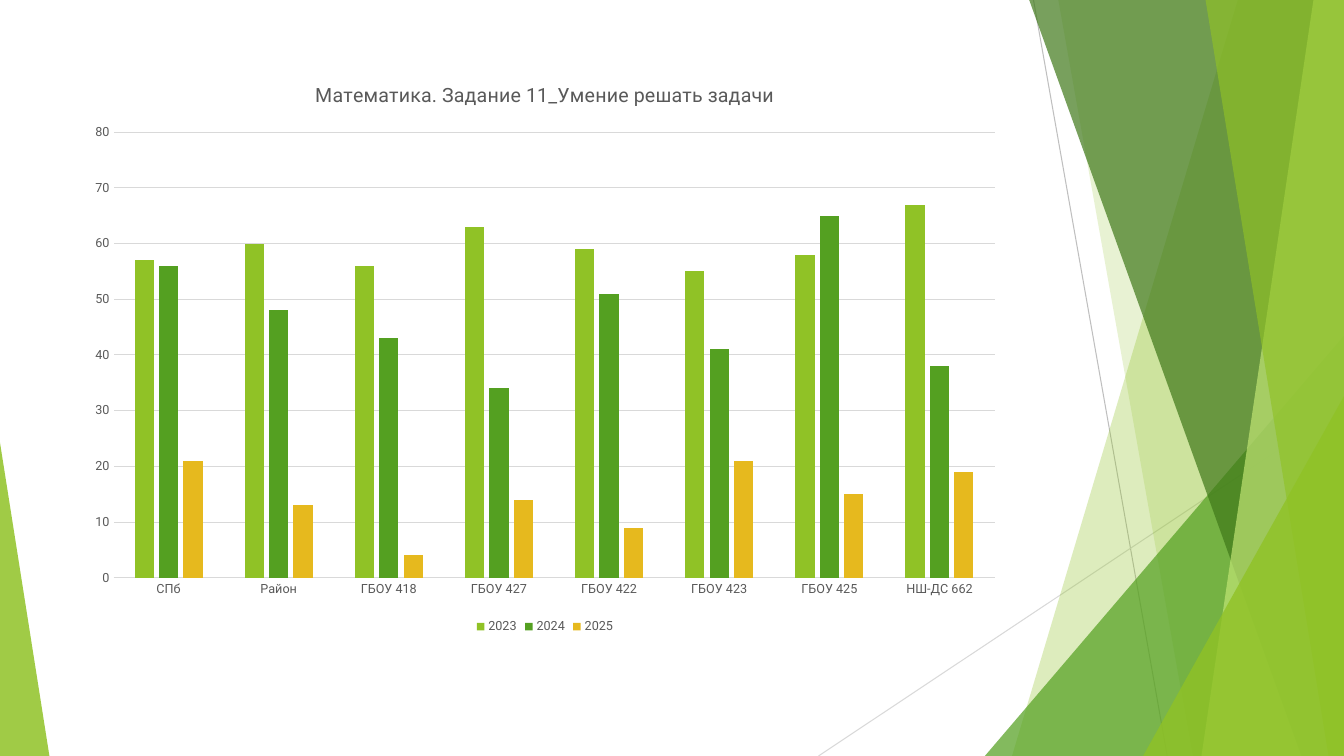
from dataclasses import dataclass

from lxml import etree
from pptx import Presentation
from pptx.chart.data import CategoryChartData
from pptx.dml.color import RGBColor
from pptx.enum.chart import XL_CHART_TYPE, XL_LEGEND_POSITION, XL_TICK_MARK
from pptx.enum.shapes import MSO_CONNECTOR, MSO_SHAPE
from pptx.oxml.ns import qn
from pptx.util import Inches, Pt

COLUMNS = XL_CHART_TYPE.COLUMN_CLUSTERED
BOTTOM = XL_LEGEND_POSITION.BOTTOM
NO_TICK = XL_TICK_MARK.NONE
STRAIGHT = MSO_CONNECTOR.STRAIGHT
TRIANGLE = MSO_SHAPE.ISOSCELES_TRIANGLE

LIME = RGBColor(0x90, 0xC2, 0x26)
GREEN = RGBColor(0x54, 0xA0, 0x21)
FOREST = RGBColor(0x3F, 0x78, 0x19)
PALE_LIME = RGBColor(0xC0, 0xE4, 0x74)
GOLD = RGBColor(0xE6, 0xB9, 0x1E)
TEXT_GRAY = RGBColor(0x59, 0x59, 0x59)
MID_GRAY = RGBColor(0xBF, 0xBF, 0xBF)
GRID_GRAY = RGBColor(0xD9, 0xD9, 0xD9)

FONT = "Roboto"
WIDTH, HEIGHT = Inches(13.333), Inches(7.5)


# Positions are percentages of the slide's width and height
@dataclass
class Ray:
    x1: float
    y1: float
    x2: float
    y2: float
    color: RGBColor


@dataclass
class Band:
    """Full-height shard from a slanted left edge to the right slide edge."""
    top_x: float
    bottom_x: float
    color: RGBColor
    alpha: int


@dataclass
class Peak:
    """Triangle standing on the bottom edge; apex 0 is left, 1 is right."""
    left: float
    right: float
    top: float
    apex: int
    color: RGBColor
    alpha: int


@dataclass
class Series:
    name: str
    values: tuple[int, ...]
    color: RGBColor


DECOR = [
    Ray(76.9, 0, 86.85, 100, MID_GRAY),
    Ray(100, 53.73, 60.9, 100, GRID_GRAY),
    Band(92.1, 75.3, LIME, 30),
    Band(78.75, 88.75, LIME, 20),
    Peak(73.28, 100, 44.4, 1, GREEN, 72),
    Band(76.58, 96.83, FOREST, 70),
    Band(97.73, 89.4, PALE_LIME, 70),
    Band(89.7, 98.85, LIME, 65),
    Peak(85.05, 100, 52.4, 1, LIME, 80),
    Peak(0, 3.68, 58.53, 0, LIME, 85),
]

TITLE = "Математика. Задание 11_Умение решать задачи"
CATEGORIES = ("СПб", "Район", "ГБОУ 418", "ГБОУ 427", "ГБОУ 422",
              "ГБОУ 423", "ГБОУ 425", "НШ-ДС 662")
SERIES = [
    Series("2023", (57, 60, 56, 63, 59, 55, 58, 67), LIME),
    Series("2024", (56, 48, 43, 34, 51, 41, 65, 38), GREEN),
    Series("2025", (21, 13, 4, 14, 9, 21, 15, 19), GOLD),
]


def px(share: float) -> int:
    return round(WIDTH * share / 100)


def py(share: float) -> int:
    return round(HEIGHT * share / 100)


def paint(sp, color: RGBColor, alpha: int) -> None:
    sp.shadow.inherit = False
    sp.line.fill.background()
    sp.fill.solid()
    sp.fill.fore_color.rgb = color
    clr = sp.fill._xPr.find(qn("a:solidFill"))[0]
    etree.SubElement(clr, qn("a:alpha"), val=str(alpha * 1000))


def draw_ray(s, ray: Ray) -> None:
    line = s.shapes.add_connector(
        STRAIGHT, px(ray.x1), py(ray.y1), px(ray.x2), py(ray.y2))
    line.line.color.rgb = ray.color
    line.line.width = Pt(0.75)
    etree.SubElement(line._element.spPr, qn("a:effectLst"))


def draw_band(s, band: Band) -> None:
    builder = s.shapes.build_freeform(px(band.top_x), 0)
    builder.add_line_segments(
        [(WIDTH, 0), (WIDTH, HEIGHT), (px(band.bottom_x), HEIGHT)], close=True)
    paint(builder.convert_to_shape(), band.color, band.alpha)


def draw_peak(s, peak: Peak) -> None:
    sp = s.shapes.add_shape(TRIANGLE, px(peak.left), py(peak.top),
                            px(peak.right - peak.left), py(100 - peak.top))
    sp.adjustments[0] = peak.apex
    paint(sp, peak.color, peak.alpha)


def set_font(font, size: float) -> None:
    font.name = FONT
    font.size = Pt(size)
    font.bold = False
    font.color.rgb = TEXT_GRAY


def draw_chart(s) -> None:
    data = CategoryChartData()
    data.categories = CATEGORIES
    for series in SERIES:
        data.add_series(series.name, series.values)
    chart = s.shapes.add_chart(
        COLUMNS, px(5.7), py(8), px(69.7), py(76.4), data).chart
    set_font(chart.font, 10)

    # Title and legend
    chart.has_title = True
    tf = chart.chart_title.text_frame
    tf.text = TITLE
    set_font(tf.paragraphs[0].runs[0].font, 14)
    chart.chart_title.include_in_layout = False
    chart.has_legend = True
    chart.legend.position = BOTTOM
    chart.legend.include_in_layout = False
    set_font(chart.legend.font, 9)

    # Axes
    cat_axis, val_axis = chart.category_axis, chart.value_axis
    for axis in (cat_axis, val_axis):
        axis.major_tick_mark = axis.minor_tick_mark = NO_TICK
        set_font(axis.tick_labels.font, 9)
    val_axis.minimum_scale, val_axis.maximum_scale = 0, 80
    val_axis.major_unit = 10
    val_axis.format.line.fill.background()
    for line in (cat_axis.format.line, val_axis.major_gridlines.format.line):
        line.color.rgb = GRID_GRAY
        line.width = Pt(0.75)

    # Columns
    plot = chart.plots[0]
    plot.gap_width, plot.overlap = 219, -27
    plot.vary_by_categories = False
    for columns, series in zip(plot.series, SERIES):
        columns.format.fill.solid()
        columns.format.fill.fore_color.rgb = series.color


def main() -> None:
    prs = Presentation()
    prs.slide_width, prs.slide_height = WIDTH, HEIGHT
    s = prs.slides.add_slide(prs.slide_layouts[6])
    draw = {Ray: draw_ray, Band: draw_band, Peak: draw_peak}
    for part in DECOR:
        draw[type(part)](s, part)
    draw_chart(s)
    prs.save("out.pptx")


if __name__ == "__main__":
    main()
